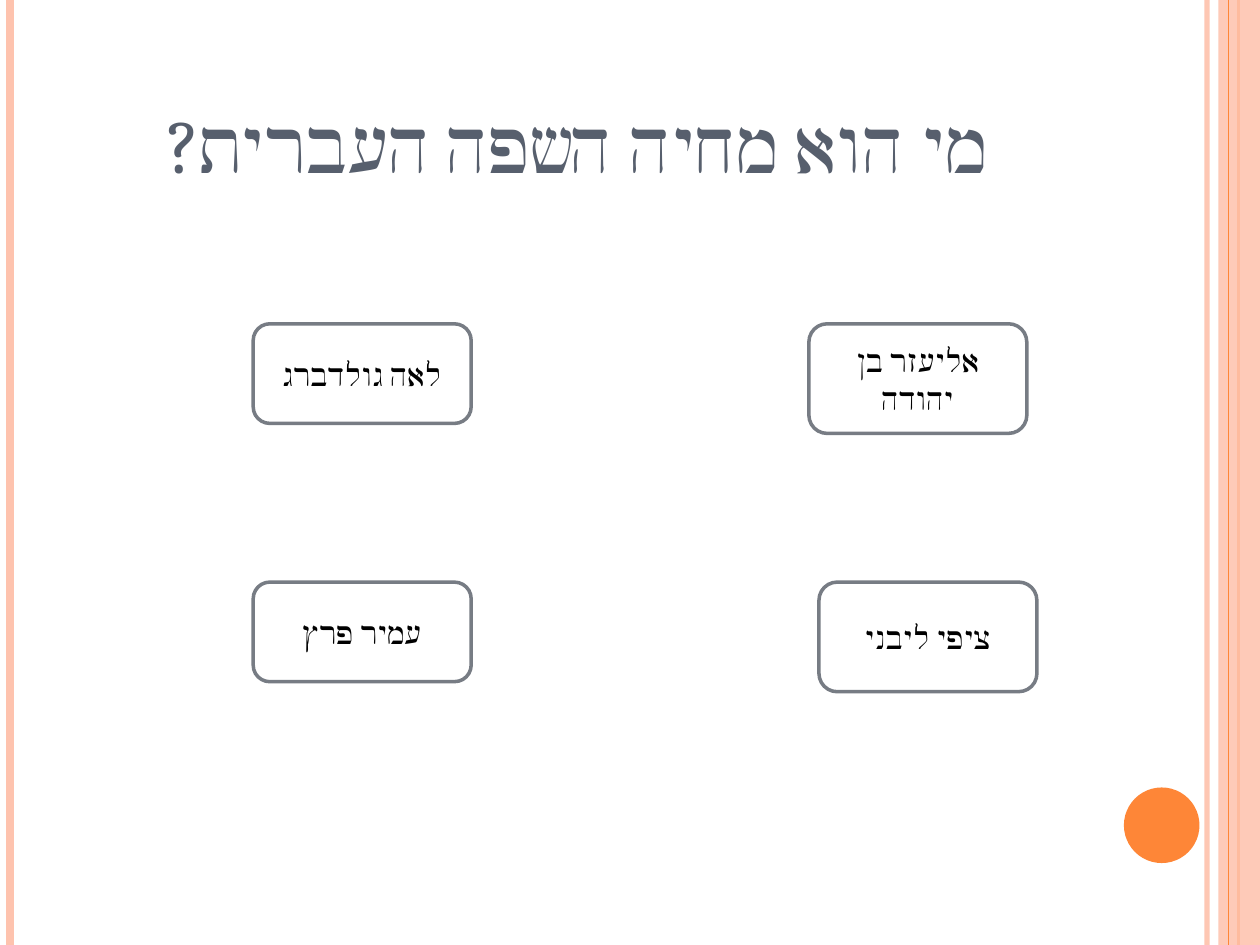
from lxml.etree import SubElement
from pptx import Presentation
from pptx.dml.color import RGBColor
from pptx.enum.shapes import MSO_CONNECTOR, MSO_SHAPE
from pptx.enum.text import MSO_ANCHOR, PP_ALIGN
from pptx.oxml.ns import qn
from pptx.util import Inches, Pt

COLORS = {
    "peach": "FEC3AE",
    "orange": "FE8637",
    "title": "575F6D",
    "border": "777C84",
    "white": "FFFFFF",
    "black": "000000",
}
FONT = "Cambria"
WIDTH, HEIGHT = 10, 7.5

TITLE = "מי הוא מחיה השפה העברית?"
ROW_TOPS = [2.57, 4.62]
ANSWER_WIDTH = 1.73
ANSWER_COLUMNS = [
    (0.87, [("אליעזר בן יהודה", 6.42), ("ציפי ליבני", 6.5)]),
    (0.79, [("לאה גולדברג", 2.01), ("עמיר פרץ", 2.01)]),
]

STRIPES_BELOW_BAND = [
    (9.58, "peach", 3, 93),
    (0.08, "peach", 4.5, 100),
    (9.83, "orange", 1.5, 100),
]
STRIPES_ABOVE_BAND = [(9.75, "orange", 0.75, 100)]


def rgb(name):
    return RGBColor.from_string(COLORS[name])


def set_alpha(element, percent):
    if percent < 100:
        color = next(element.iter(qn("a:srgbClr")))
        SubElement(color, qn("a:alpha")).set("val", str(percent * 1000))


def add_stripes(s, stripes):
    for x, color, width, alpha in stripes:
        line = s.shapes.add_connector(
            MSO_CONNECTOR.STRAIGHT, Inches(x), 0, Inches(x), Inches(HEIGHT))
        line.line.color.rgb = rgb(color)
        line.line.width = Pt(width)
        spPr = line._element.spPr
        set_alpha(spPr, alpha)
        SubElement(spPr, qn("a:effectLst"))


def add_shape(s, kind, box, fill):
    sp = s.shapes.add_shape(kind, *map(Inches, box))
    sp.shadow.inherit = False
    sp.fill.solid()
    sp.fill.fore_color.rgb = rgb(fill)
    sp.line.fill.background()
    return sp


def write_hebrew(sp, text, size, color, anchor):
    tf = sp.text_frame
    tf.word_wrap = True
    tf.vertical_anchor = anchor
    p = tf.paragraphs[0]
    p.text = text
    p.alignment = PP_ALIGN.CENTER
    p.font.name = FONT
    p.font.size = Pt(size)
    p.font.color.rgb = rgb(color)
    pPr = p._p.pPr
    pPr.set("rtl", "1")
    SubElement(pPr.find(qn("a:defRPr")), qn("a:cs")).set("typeface", FONT)


prs = Presentation()
prs.slide_width, prs.slide_height = Inches(WIDTH), Inches(HEIGHT)
s = prs.slides.add_slide(prs.slide_layouts[6])

add_stripes(s, STRIPES_BELOW_BAND)
band = add_shape(s, MSO_SHAPE.RECTANGLE, (9.67, 0, 0.33, HEIGHT), "peach")
set_alpha(band._element.spPr, 87)
add_stripes(s, STRIPES_ABOVE_BAND)
add_shape(s, MSO_SHAPE.OVAL, (8.92, 6.25, 0.6, 0.6), "orange")

title = s.shapes.add_textbox(*map(Inches, (0.5, 0.3, 8.17, 1.25)))
write_hebrew(title, TITLE, 44, "title", MSO_ANCHOR.BOTTOM)

for height, answers in ANSWER_COLUMNS:
    for top, (name, left) in zip(ROW_TOPS, answers):
        sp = add_shape(s, MSO_SHAPE.FLOWCHART_ALTERNATE_PROCESS,
                       (left, top, ANSWER_WIDTH, height), "white")
        sp.line.color.rgb = rgb("border")
        sp.line.width = Pt(2)
        write_hebrew(sp, name, 18, "black", MSO_ANCHOR.MIDDLE)

prs.save("out.pptx")
